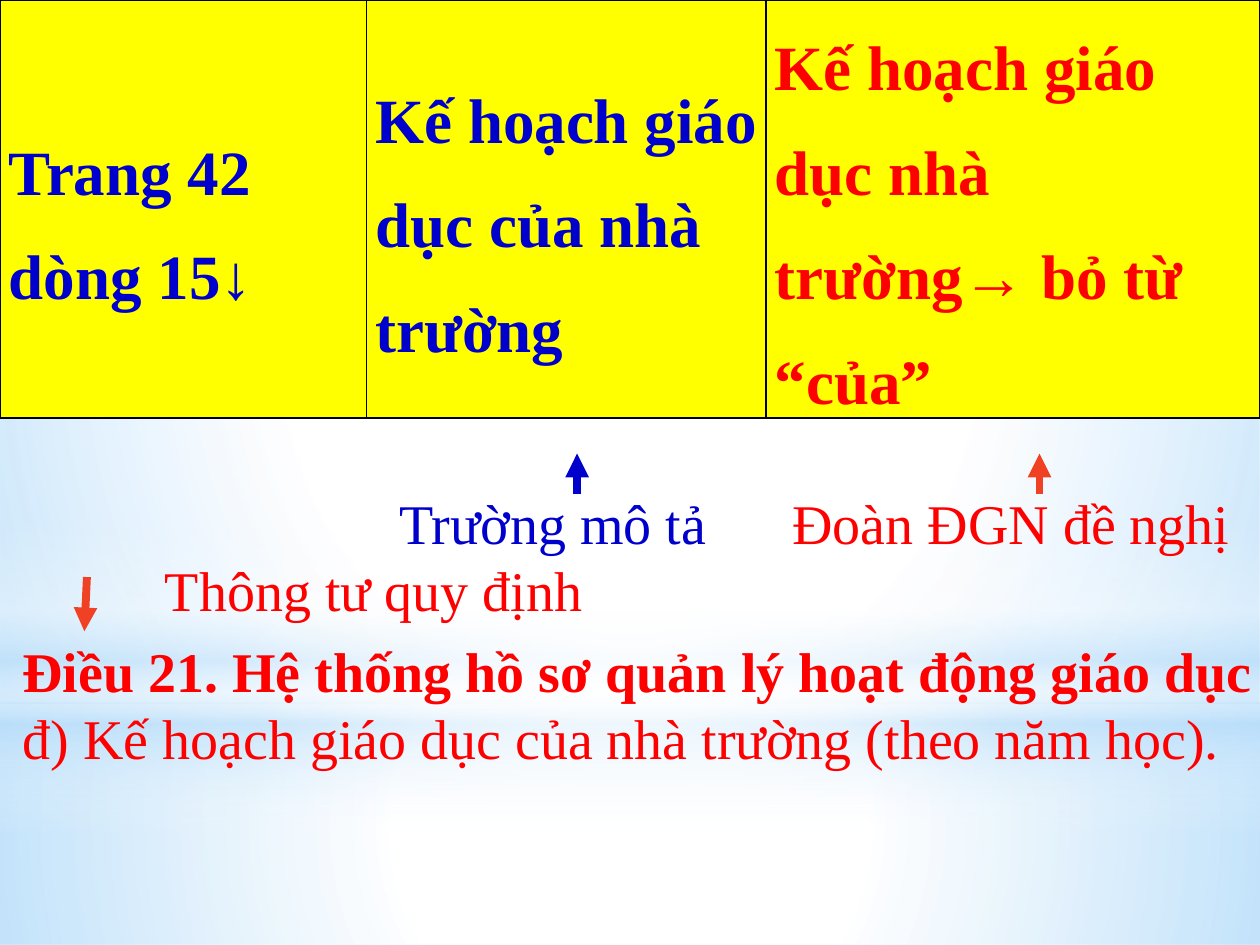
import dataclasses

import lxml.etree
import pptx
import pptx.dml.color
import pptx.enum.shapes
import pptx.enum.text
import pptx.oxml
import pptx.oxml.ns
import pptx.util

FONT = "Times New Roman"
BLUE, RED, ORANGE, YELLOW = "0000CC", "FF0000", "F14124", "FFFF00"
WHITE, SKY = "FFFFFF", "B4DCFA"


@dataclasses.dataclass
class Box:
    left: float
    top: float
    width: float
    height: float

    def point(self, x, y):
        """Position given in percent of this box."""
        return (round(self.left + self.width * x / 100),
                round(self.top + self.height * y / 100))

    def inner(self, x, y, width, height):
        """Smaller box given in percent of this box."""
        return Box(*self.point(x, y), round(self.width * width / 100),
                   round(self.height * height / 100))

    def bounds(self):
        return self.left, self.top, self.width, self.height


def color(value):
    return pptx.dml.color.RGBColor.from_string(value)


def add_xml(parent, tag, **attributes):
    child = lxml.etree.SubElement(parent, pptx.oxml.ns.qn(tag))
    for name, value in attributes.items():
        child.set(name, str(value))
    return child


def add_text(paragraph, text, size=32, fill=RED, bold=False):
    run = paragraph.add_run()
    run.text = text
    run.font.name = FONT
    run.font.size = pptx.util.Pt(size)
    run.font.bold = bold
    run.font.color.rgb = color(fill)


def add_text_frame(slide, box):
    frame = slide.shapes.add_textbox(*box.bounds()).text_frame
    frame.word_wrap = True
    return frame


def add_gradient_shape(slide, box, kind, stops, radial=True):
    shape = slide.shapes.add_shape(kind, *box.bounds())
    shape.shadow.inherit = False
    shape.line.fill.background()
    shape.fill.background()
    properties = shape._element.spPr
    gradient = pptx.oxml.parse_xml(
        f'<a:gradFill {pptx.oxml.ns.nsdecls("a")} rotWithShape="1"/>')
    stop_list = add_xml(gradient, "a:gsLst")
    for position, fill, opacity in stops:
        stop = add_xml(stop_list, "a:gs", pos=position * 1000)
        stop_color = add_xml(stop, "a:srgbClr", val=fill)
        add_xml(stop_color, "a:alpha", val=opacity * 1000)
    if radial:
        circle = add_xml(gradient, "a:path", path="circle")
        add_xml(circle, "a:fillToRect", l=50000, t=50000, r=50000, b=50000)
    else:
        add_xml(gradient, "a:lin", ang=90 * 60000, scaled=0)
    properties.replace(properties.find(pptx.oxml.ns.qn("a:noFill")), gradient)


def add_arrow(slide, start, end, fill):
    arrow = slide.shapes.add_connector(
        pptx.enum.shapes.MSO_CONNECTOR.STRAIGHT, *start, *end)
    arrow.line.color.rgb = color(fill)
    arrow.line.width = pptx.util.Pt(4.5)
    add_xml(arrow.line._get_or_add_ln(), "a:tailEnd", type="triangle")
    add_xml(arrow._element.spPr, "a:effectLst")


def add_backdrop(slide, box):
    rectangle = pptx.enum.shapes.MSO_SHAPE.RECTANGLE
    ellipse = pptx.enum.shapes.MSO_SHAPE.OVAL
    add_gradient_shape(slide, box.inner(0, 74.4, 100, 25.6), rectangle,
                       [(0, WHITE, 91), (37, WHITE, 76), (100, SKY, 79)])
    add_gradient_shape(slide, box.inner(0, 0, 100, 74.4), rectangle,
                       [(0, WHITE, 89), (48, WHITE, 62), (100, SKY, 79)])
    add_gradient_shape(slide, box.inner(0, 54.93, 100, 33.33), rectangle,
                       [(0, WHITE, 0), (29, WHITE, 30), (45, SKY, 40),
                        (55, WHITE, 26), (65, SKY, 60), (100, WHITE, 0)],
                       radial=False)
    add_gradient_shape(slide, box.inner(0, 23.33, 100, 74.4), ellipse,
                       [(0, WHITE, 100), (56, WHITE, 0)])


def format_cell(cell):
    cell.vertical_anchor = pptx.enum.text.MSO_ANCHOR.MIDDLE
    cell.margin_left = cell.margin_right = pptx.util.Inches(0.07)
    cell.margin_top = cell.margin_bottom = 0
    properties = cell._tc.get_or_add_tcPr()
    for side in ("a:lnL", "a:lnR", "a:lnT", "a:lnB"):
        border = add_xml(properties, side, w=pptx.util.Pt(1))
        add_xml(add_xml(border, "a:solidFill"), "a:srgbClr", val="000000")
    cell.fill.solid()
    cell.fill.fore_color.rgb = color(YELLOW)


def add_comparison_table(slide, box):
    columns = [(29.1, "Trang 42 dòng 15↓", BLUE),
               (31.7, "Kế hoạch giáo dục của nhà trường", BLUE),
               (39.2, "Kế hoạch giáo dục nhà trường→ bỏ từ “của”", RED)]
    table = slide.shapes.add_table(1, len(columns), *box.bounds()).table
    table.rows[0].height = round(box.height * 5 / 6)
    for index, (share, text, fill) in enumerate(columns):
        table.columns[index].width = round(box.width * share / 100)
        cell = table.cell(0, index)
        format_cell(cell)
        paragraph = cell.text_frame.paragraphs[0]
        paragraph.line_spacing = 1.5
        add_text(paragraph, text, size=36, fill=fill, bold=True)


def add_source_labels(slide, box):
    # Labels lined up by tab stops
    frame = add_text_frame(slide, box.inner(10, 15.33, 89.2, 78.67))
    upper, lower = frame.paragraphs[0], frame.add_paragraph()
    tabs = add_xml(upper._p.get_or_add_pPr(), "a:tabLst")
    for position in (2.07, 5.19):
        add_xml(tabs, "a:tab", pos=pptx.util.Inches(position), algn="l")
    add_text(upper, "\tTrường mô tả", fill=BLUE)
    add_text(upper, "\tĐoàn ĐGN đề nghị")
    lower._p.get_or_add_pPr().set("marL", str(pptx.util.Inches(0.21)))
    add_text(lower, "Thông tư quy định")

    # Arrows up to the table and down to the regulation
    for x, fill in ((45.8, BLUE), (82.5, ORANGE)):
        add_arrow(slide, box.point(x, 21.33), box.point(x, 0), fill)
    add_arrow(slide, box.point(6.9, 65.33), box.point(6.7, 94), ORANGE)


def add_regulation(slide, box):
    frame = add_text_frame(slide, box)
    add_text(frame.paragraphs[0],
             "Điều 21. Hệ thống hồ sơ quản lý hoạt động giáo dục", bold=True)
    add_text(frame.add_paragraph(),
             "đ) Kế hoạch giáo dục của nhà trường (theo năm học).")


def main():
    presentation = pptx.Presentation()
    presentation.slide_width = pptx.util.Inches(10)
    presentation.slide_height = pptx.util.Inches(7.5)
    slide = presentation.slides.add_slide(presentation.slide_layouts[6])
    page = Box(0, 0, presentation.slide_width, presentation.slide_height)

    add_backdrop(slide, page)
    add_comparison_table(slide, page.inner(0, 0, 100, 48))
    add_regulation(slide, page.inner(0.8, 66.67, 100, 19.73))
    add_source_labels(slide, page.inner(0, 48, 100, 20))
    presentation.save("out.pptx")


if __name__ == "__main__":
    main()
